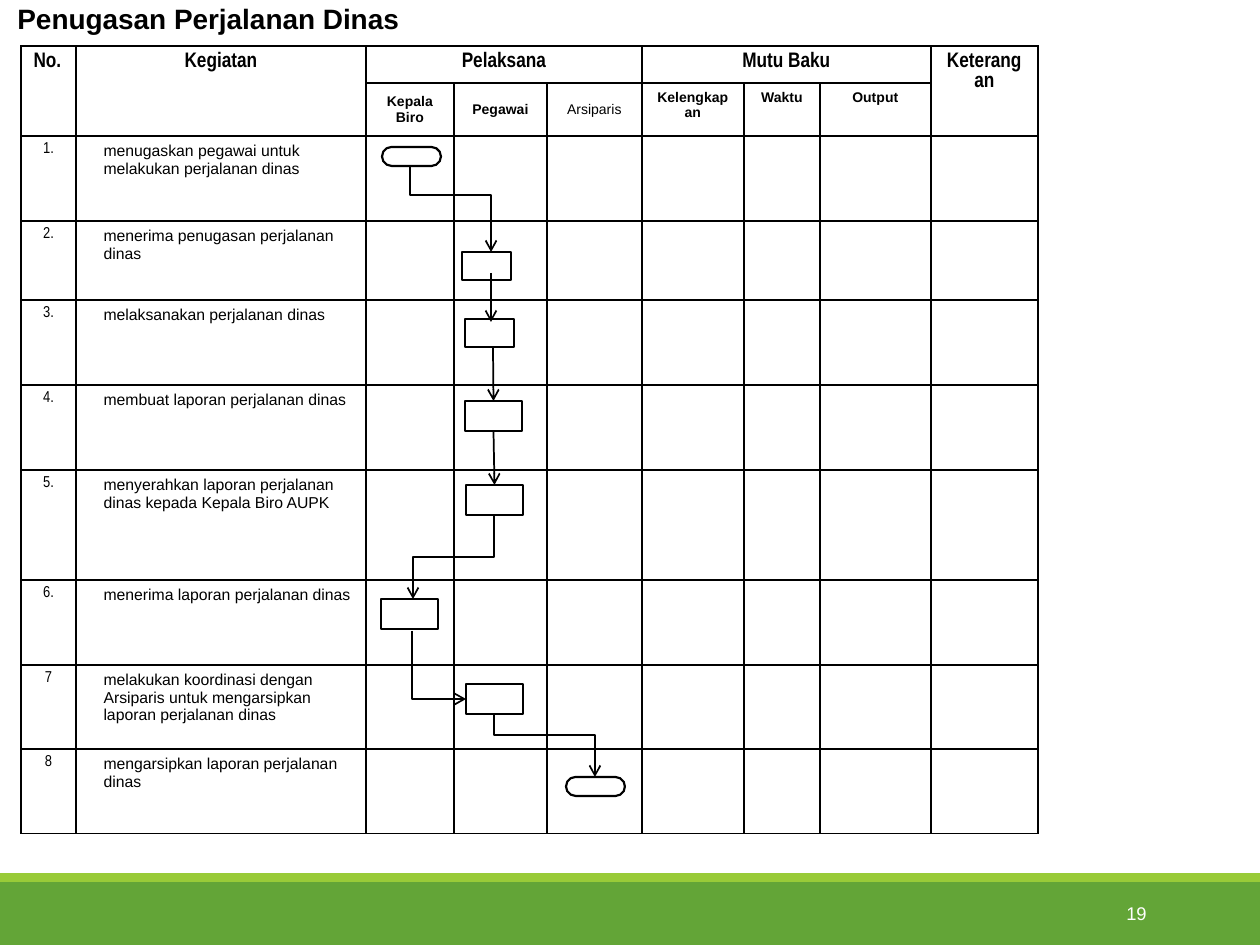
"""Build the slide with the business travel assignment procedure."""
from lxml.etree import SubElement
from pptx import Presentation
from pptx.dml.color import RGBColor
from pptx.enum.shapes import MSO_CONNECTOR, MSO_SHAPE
from pptx.enum.text import MSO_ANCHOR, PP_ALIGN
from pptx.oxml.ns import qn
from pptx.util import Inches, Pt

SCALE = Inches(1) / 126
COLORS = {"ink": "000000", "paper": "FFFFFF", "green": "63A537", "lime": "99CB38"}
FORMATS = {
    "title": {"name": "Arial", "size": Pt(16), "bold": True},
    "number": {"name": "Arial", "size": Pt(10.5), "bold": False},
    "head": {"name": "Arial Narrow", "size": Pt(12), "bold": True},
    "subhead": {"name": "Arial", "size": Pt(8), "bold": True},
    "plain_subhead": {"name": "Arial", "size": Pt(8), "bold": False},
    "step": {"name": "Arial Narrow", "size": Pt(9), "bold": False},
    "activity": {"name": "Arial", "size": Pt(9), "bold": False},
}
COLUMNS = [55, 290, 88, 93, 95, 102, 76, 111, 107]
ROWS = [37, 53, 85, 79, 85, 85, 110, 85, 84, 85]
MERGES = [(0, 0, 1, 0), (0, 1, 1, 1), (0, 2, 0, 4), (0, 5, 0, 7), (0, 8, 1, 8)]
HEADS = {0: "No.", 1: "Kegiatan", 2: "Pelaksana", 5: "Mutu Baku", 8: "Keterangan"}
SUBHEADS = ["Kepala Biro", "Pegawai", "Arsiparis", "Kelengkapan", "Waktu", "Output"]
STEPS = [
    ("1.", "menugaskan pegawai untuk melakukan perjalanan dinas"),
    ("2.", "menerima penugasan perjalanan dinas"),
    ("3.", "melaksanakan perjalanan dinas"),
    ("4.", "membuat laporan perjalanan dinas"),
    ("5.", "menyerahkan laporan perjalanan dinas kepada Kepala Biro AUPK"),
    ("6.", "menerima laporan perjalanan dinas"),
    ("7", "melakukan koordinasi dengan Arsiparis untuk mengarsipkan laporan perjalanan dinas"),
    ("8", "mengarsipkan laporan perjalanan dinas"),
]


def px(value):
    return round(value * SCALE)


def color(name):
    return RGBColor.from_string(COLORS[name])


class Sketch:
    """Draws styled elements on the current page."""

    def __init__(self, page):
        self.page = page

    def add_text(self, frame, text, style, ink="ink", align=PP_ALIGN.LEFT):
        frame.word_wrap = True
        para = frame.paragraphs[0]
        para.alignment = align
        span = para.add_run()
        span.text = text
        for key, value in FORMATS[style].items():
            setattr(span.font, key, value)
        span.font.color.rgb = color(ink)
        return para

    def box(self, kind, left, top, width, height, fill=None, line=None):
        box = self.page.shapes.add_shape(kind, *map(px, (left, top, width, height)))
        box.shadow.inherit = False
        if fill:
            box.fill.solid()
            box.fill.fore_color.rgb = color(fill)
        else:
            box.fill.background()
        if line:
            box.line.color.rgb = color(line)
            box.line.width = Pt(1.25)
        else:
            box.line.fill.background()
        return box

    def process(self, left, top, width=57, height=30):
        return self.box(MSO_SHAPE.FLOWCHART_PROCESS, left, top, width, height, line="ink")

    def terminator(self, left, top):
        return self.box(MSO_SHAPE.FLOWCHART_TERMINATOR, left, top, 59, 19, line="ink")

    def arrow(self, x1, y1, x2, y2, kind=MSO_CONNECTOR.STRAIGHT):
        arrow = self.page.shapes.add_connector(kind, *map(px, (x1, y1, x2, y2)))
        arrow.line.color.rgb = color("ink")
        arrow.line.width = Pt(1)
        properties = arrow._element.spPr
        SubElement(properties.find(qn("a:ln")), qn("a:tailEnd"), type="arrow")
        SubElement(properties, qn("a:effectLst"))
        return arrow

    def elbow(self, x1, y1, x2, y2, bend=None):
        """Leave downwards; turn at the bend share, or once only if there is none."""
        across, down = abs(x2 - x1), y2 - y1
        left, top = (x1 + x2 - down) / 2, (y1 + y2 - across) / 2
        elbow = self.arrow(left, top, left + down, top + across, MSO_CONNECTOR.ELBOW)
        properties = elbow._element.spPr
        frame = properties.find(qn("a:xfrm"))
        frame.set("rot", "16200000" if x2 > x1 else "5400000")
        if x2 > x1:
            frame.set("flipH", "1")
        geometry = properties.find(qn("a:prstGeom"))
        if bend is None:
            geometry.set("prst", "bentConnector2")
        else:
            guides = geometry.find(qn("a:avLst"))
            SubElement(guides, qn("a:gd"), name="adj1", fmla=f"val {round(bend * 100000)}")

    def label(self, left, top, width, height, text, style, ink, align):
        label = self.page.shapes.add_textbox(*map(px, (left, top, width, height)))
        label.text_frame.vertical_anchor = MSO_ANCHOR.MIDDLE
        self.add_text(label.text_frame, text, style, ink, align)

    def border(self, cell):
        for side in ("lnL", "lnR", "lnT", "lnB"):
            edge = SubElement(cell._tc.get_or_add_tcPr(), qn(f"a:{side}"), w=str(int(Pt(1))))
            SubElement(SubElement(edge, qn("a:solidFill")), qn("a:srgbClr"), val=COLORS["ink"])
        cell.fill.background()

    def table(self, left, top):
        shape = self.page.shapes.add_table(
            len(ROWS), len(COLUMNS), px(left), px(top), px(sum(COLUMNS)), px(sum(ROWS)))
        table = shape.table
        table.first_row = table.horz_banding = False
        for column, width in zip(table.columns, COLUMNS):
            column.width = px(width)
        for row, height in zip(table.rows, ROWS):
            row.height = px(height)
        for cell in table.iter_cells():
            self.border(cell)
            SubElement(cell.text_frame.paragraphs[0]._p, qn("a:endParaRPr"), sz="900")
        for top_row, first, bottom_row, last in MERGES:
            table.cell(top_row, first).merge(table.cell(bottom_row, last))
        return table


def fill_table(sketch, table):
    center = PP_ALIGN.CENTER
    for column, text in HEADS.items():
        align = center if column else PP_ALIGN.LEFT
        sketch.add_text(table.cell(0, column).text_frame, text, "head", align=align)
    for column, text in enumerate(SUBHEADS, 2):
        cell = table.cell(1, column)
        if column < 5:
            cell.vertical_anchor = MSO_ANCHOR.MIDDLE
        style = "plain_subhead" if text == "Arsiparis" else "subhead"
        sketch.add_text(cell.text_frame, text, style, align=center)
    for row, (step, activity) in enumerate(STEPS, 2):
        sketch.add_text(table.cell(row, 0).text_frame, step, "step", align=center)
        para = sketch.add_text(table.cell(row, 1).text_frame, activity, "activity")
        para._p.get_or_add_pPr().set("marL", str(px(15)))


def draw_flow(sketch):
    sketch.terminator(382, 147)
    sketch.process(462, 252, 49, 28)
    sketch.process(465, 319, 49, 28)
    report = sketch.process(465, 401)
    handover = sketch.process(466, 485)
    sketch.process(381, 599)
    sketch.process(466, 684)
    sketch.terminator(566, 777)

    sketch.elbow(410, 166, 491, 252, 0.34)
    sketch.arrow(491, 273, 491, 322)
    sketch.arrow(493, 347, 493, 401).end_connect(report, 0)
    submit = sketch.arrow(493, 431, 494, 485)
    submit.begin_connect(report, 2)
    submit.end_connect(handover, 0)
    sketch.elbow(494, 515, 413, 599, 0.5)
    sketch.elbow(412, 631, 466, 699)
    sketch.elbow(494, 714, 595, 777, 0.33)


def main():
    deck = Presentation()
    deck.slide_width, deck.slide_height = Inches(10), Inches(7.5)
    sketch = Sketch(deck.slides.add_slide(deck.slide_layouts[6]))
    sketch.box(MSO_SHAPE.RECTANGLE, 0, 882, 1260, 63, "green")
    sketch.box(MSO_SHAPE.RECTANGLE, 0, 873, 1260, 9, "lime")
    fill_table(sketch, sketch.table(21, 46))
    title = sketch.box(MSO_SHAPE.RECTANGLE, 5, -5, 1217, 47, "paper")
    sketch.add_text(title.text_frame, "Penugasan Perjalanan Dinas", "title")
    draw_flow(sketch)
    sketch.label(1023, 890, 136, 47, "19", "number", "paper", PP_ALIGN.RIGHT)
    deck.save("out.pptx")


if __name__ == "__main__":
    main()
